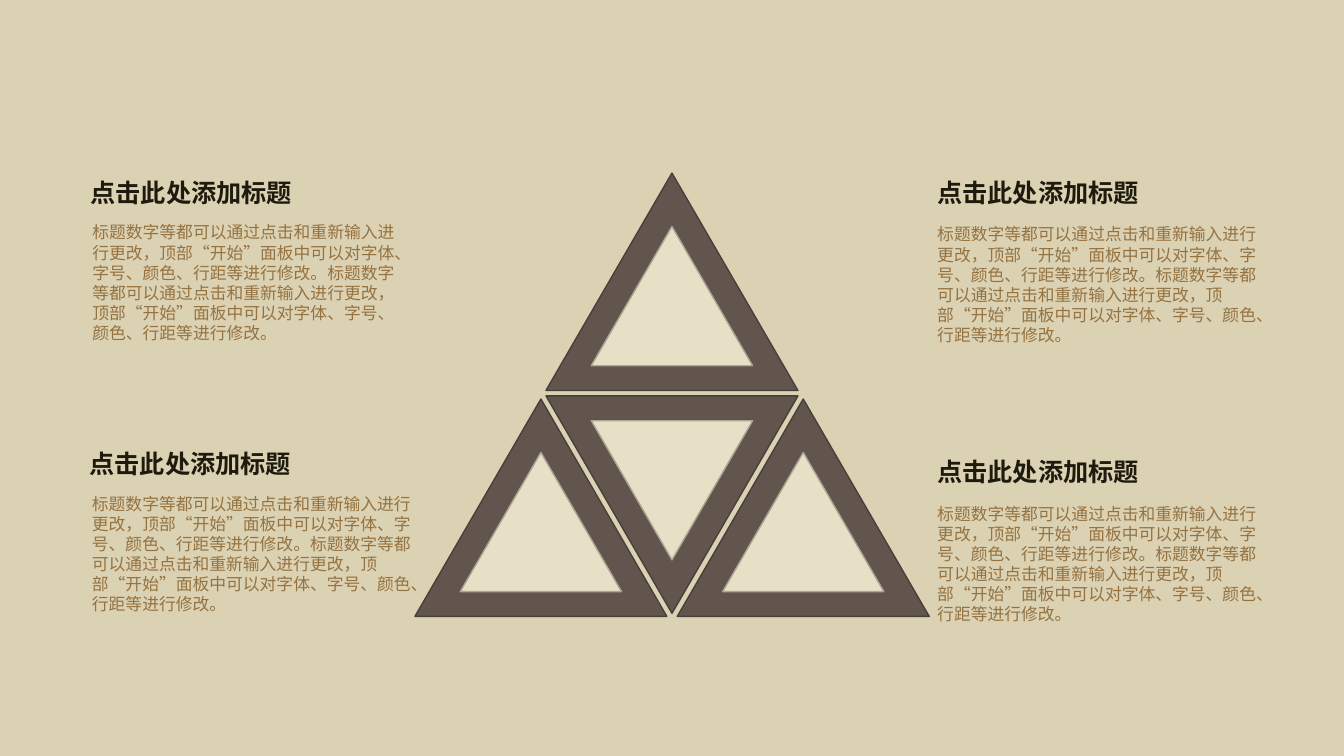
from pptx import Presentation
from pptx.dml.color import RGBColor
from pptx.enum.shapes import MSO_SHAPE
from pptx.util import Pt
from lxml.etree import SubElement
from pptx.oxml.ns import qn

TITLE = "点击此处添加标题"
HALF = "标题数字等都可以通过点击和重新输入进行更改，顶部“开始”面板中可以对字体、字号、颜色、行距等进行修改。"
WIDE, HIGH = 180, 155.3
OUTER = [(90, 0), (180, HIGH), (0, HIGH)]
INNER = [(90, 44), (37.5, 134), (142.5, 134)]


def color(code):
    return RGBColor.from_string(code)


def paint(shape, fill, line):
    shape.shadow.inherit = False
    shape.fill.solid()
    shape.fill.fore_color.rgb = color(fill)
    shape.line.color.rgb = color(line)
    shape.line.width = Pt(1)


def add_ring(slide, left, top, turn):
    hole = [(Pt(left + x), Pt(top + y)) for x, y in INNER]
    edge = [(Pt(left + x), Pt(top + y)) for x, y in OUTER]
    form = slide.shapes.build_freeform(*hole[0])
    form.add_line_segments(hole[1:])
    form.move_to(*edge[0])
    form.add_line_segments(edge[1:])
    ring = form.convert_to_shape()
    ring.rotation = turn
    paint(ring, "62554E", "493F3A")


def add_core(slide, left, top, turn):
    width, height, drop = 115.2, 99.4, 38.2
    if turn:
        drop = HIGH - drop - height
    core = slide.shapes.add_shape(
        MSO_SHAPE.ISOSCELES_TRIANGLE, Pt(left + (WIDE - width) / 2),
        Pt(top + drop), Pt(width), Pt(height))
    core.rotation = turn
    paint(core, "E7E0C7", "ABA693")


def add_text(slide, box, text, size, face, code, bold=False, pitch=None):
    frame = slide.shapes.add_textbox(*map(Pt, box)).text_frame
    frame.word_wrap = True
    frame.margin_left = frame.margin_right = Pt(5.2)
    frame.margin_top = frame.margin_bottom = Pt(2.6)
    para = frame.paragraphs[0]
    if pitch:
        para.line_spacing = Pt(pitch)
    run = para.add_run()
    run.text = text
    font = run.font
    font.size = Pt(size)
    font.bold = bold
    font.color.rgb = color(code)
    font.name = face
    SubElement(run._r.get_or_add_rPr(), qn("a:ea")).set("typeface", face)


def add_note(slide, title, body, width):
    add_text(slide, (*title, 237.6, 49), TITLE, 18, "Roboto", "1E1A0D", True)
    add_text(slide, (*body, width, 92.9), HALF * 2, 12,
             "Noto Sans CJK SC", "957341", pitch=14.4)


def main():
    deck = Presentation()
    deck.slide_width, deck.slide_height = Pt(960), Pt(540)
    slide = deck.slides.add_slide(deck.slide_layouts[6])
    slide.background.fill.solid()
    slide.background.fill.fore_color.rgb = color("DBD1B3")
    for left, top, turn in [(390, 123.6, 0), (296.4, 285, 0),
                            (483.8, 285, 0), (390, 282.8, 180)]:
        add_ring(slide, left, top, turn)
        add_core(slide, left, top, turn)
    for title, body, width in [
            ((59.4, 123.8), (60.8, 156.1), 235.4),
            ((664.3, 123.8), (664.3, 157.5), 244.8),
            ((58.8, 317.5), (60.5, 349.8), 244.8),
            ((664.3, 323.3), (664.3, 356.9), 244.8)]:
        add_note(slide, title, body, width)
    deck.save("out.pptx")


if __name__ == "__main__":
    main()
